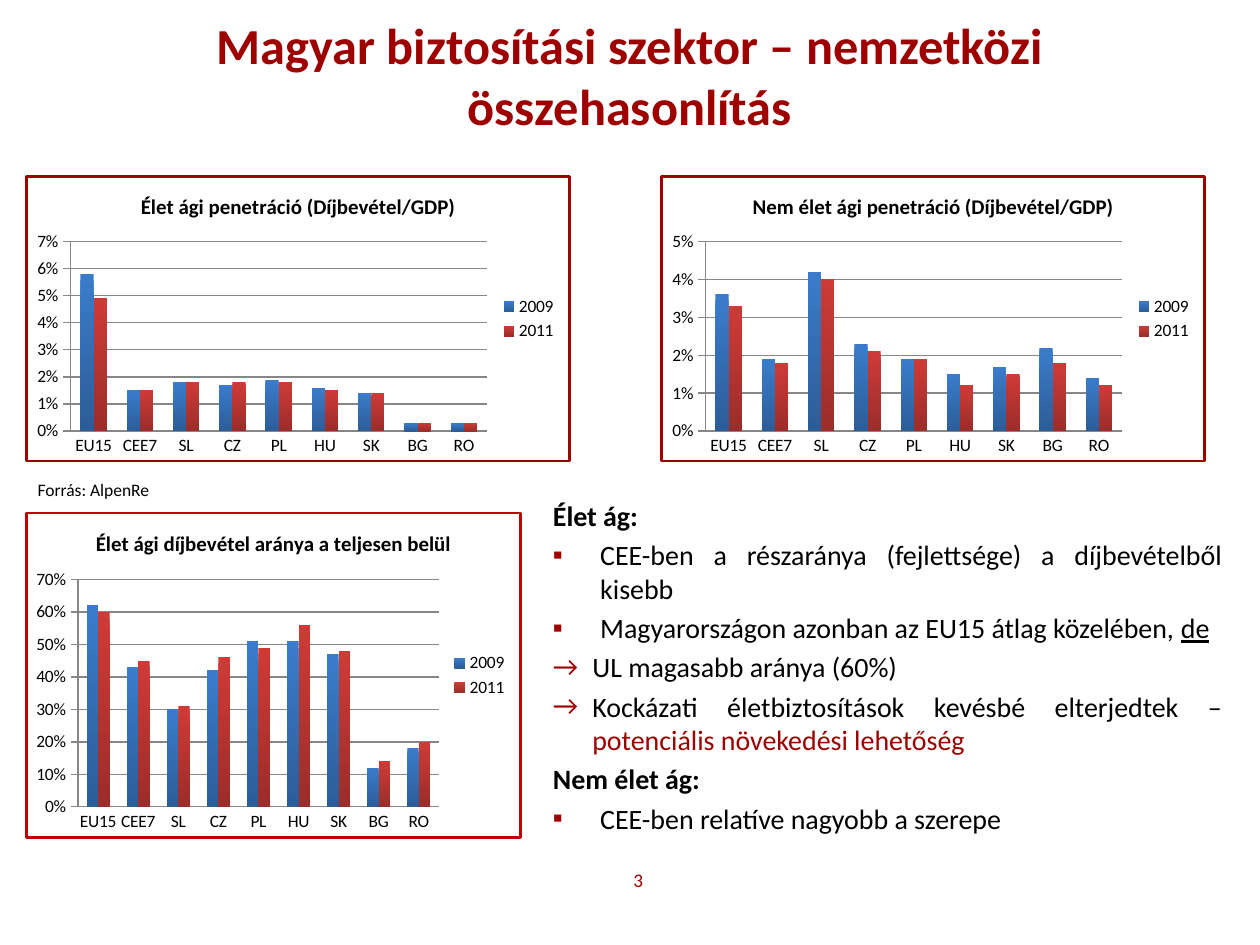
from lxml import etree
from pptx import Presentation
from pptx.chart.data import CategoryChartData
from pptx.dml.color import RGBColor
from pptx.enum import chart as ch, text as tx
from pptx.oxml import parse_xml
from pptx.oxml.ns import nsdecls, qn
from pptx.util import Pt

RED = RGBColor(0x9E, 0x00, 0x00)
EDGE = RGBColor(0xC0, 0x00, 0x00)
BLACK = RGBColor(0x00, 0x00, 0x00)
GRID = RGBColor(0x86, 0x86, 0x86)
BARS = [
    (RGBColor(0x3A, 0x7C, 0xCB), RGBColor(0x2C, 0x5D, 0x98)),
    (RGBColor(0xCE, 0x3B, 0x37), RGBColor(0x9B, 0x2D, 0x2A)),
]
FONT = "Calibri"
LANDS = ["EU15", "CEE7", "SL", "CZ", "PL", "HU", "SK", "BG", "RO"]
YEARS = ["2009", "2011"]

# Charts: box, title, border, axis top, axis step, percent values per year
CHARTS = [
    ((14.4, 100.1, 311.8, 164.2), "Élet ági penetráció (Díjbevétel/GDP)", RED, 7, 1,
     [[5.8, 1.5, 1.8, 1.7, 1.9, 1.6, 1.4, 0.3, 0.3],
      [4.9, 1.5, 1.8, 1.8, 1.8, 1.5, 1.4, 0.3, 0.3]]),
    ((377.3, 100.1, 311.8, 164.2), "Nem élet ági penetráció (Díjbevétel/GDP)", RED, 5, 1,
     [[3.6, 1.9, 4.2, 2.3, 1.9, 1.5, 1.7, 2.2, 1.4],
      [3.3, 1.8, 4, 2.1, 1.9, 1.2, 1.5, 1.8, 1.2]]),
    ((14.4, 292.3, 283.7, 187.2), "Élet ági díjbevétel aránya a teljesen belül", EDGE, 70, 10,
     [[62, 43, 30, 42, 51, 51, 47, 12, 18],
      [60, 45, 31, 46, 49, 56, 48, 14, 20]]),
]

# Notes: bullet, then runs of text with their format
NOTES = [
    ("", [("Élet ág:", {"bold": True})]),
    ("▪", [("CEE-ben a részaránya (fejlettsége) a díjbevételből kisebb", {})]),
    ("▪", [("Magyarországon azonban az EU15 átlag közelében, ", {}),
           ("de", {"under": True})]),
    ("→", [("UL magasabb aránya (60%)", {})]),
    ("→", [("Kockázati életbiztosítások kevésbé elterjedtek – ", {}),
           ("potenciális növekedési lehetőség", {"color": RED})]),
    ("", [("Nem élet ág:", {"bold": True})]),
    ("▪", [("CEE-ben relatíve nagyobb a szerepe", {})]),
]


def style(font, size, color=BLACK, bold=False, under=None):
    font.name, font.size, font.bold = FONT, Pt(size), bold
    font.underline = under
    font.color.rgb = color


def write(para, words, size, align=None, **form):
    """Add one formatted run to a paragraph."""
    run = para.add_run()
    run.text = words
    style(run.font, size, **form)
    if align is not None:
        para.alignment = align


def frame(slide, box, anchor=tx.MSO_ANCHOR.TOP):
    body = slide.shapes.add_textbox(*map(Pt, box)).text_frame
    body.word_wrap = True
    body.vertical_anchor = anchor
    return body


def label(slide, box, words, size, anchor=tx.MSO_ANCHOR.TOP, **form):
    write(frame(slide, box, anchor).paragraphs[0], words, size, **form)


def indent(para, mark):
    """Hang the paragraph, with a red bullet if it has one."""
    props = para._p.get_or_add_pPr()
    hang = Pt(22.5 if mark == "→" else 27)
    props.set("marL", str(hang))
    props.set("indent", str(-hang))
    if mark:
        tint = etree.SubElement(props, qn("a:buClr"))
        etree.SubElement(tint, qn("a:srgbClr")).set("val", str(RED))
        etree.SubElement(props, qn("a:buFont")).set("typeface", FONT)
        etree.SubElement(props, qn("a:buChar")).set("char", mark)
    else:
        etree.SubElement(props, qn("a:buNone"))


def notes(slide, box):
    body = frame(slide, box)
    for i, (mark, runs) in enumerate(NOTES):
        para = body.paragraphs[0] if i == 0 else body.add_paragraph()
        indent(para, mark)
        if i:
            para.space_before = Pt(3.2)
        for words, form in runs:
            write(para, words, 16, align=tx.PP_ALIGN.JUSTIFY, **form)


def border(chart, color):
    area = parse_xml(
        f'<c:spPr {nsdecls("c", "a")}><a:solidFill><a:srgbClr val="FFFFFF"/></a:solidFill>'
        f'<a:ln w="{Pt(1.5)}"><a:solidFill><a:srgbClr val="{color}"/></a:solidFill></a:ln>'
        '</c:spPr>')
    chart._chartSpace.find(qn("c:chart")).addnext(area)


def columns(slide, box, title, edge, top, step, rows):
    data = CategoryChartData(number_format="0%")
    data.categories = LANDS
    for year, row in zip(YEARS, rows):
        data.add_series(year, [round(v / 100, 3) for v in row])
    kind = ch.XL_CHART_TYPE.COLUMN_CLUSTERED
    chart = slide.shapes.add_chart(kind, *map(Pt, box), data).chart
    style(chart.font, 10)
    border(chart, edge)

    # Title and legend
    chart.has_title = True
    write(chart.chart_title.text_frame.paragraphs[0], title, 12, bold=True)
    chart.chart_title.include_in_layout = False
    chart.has_legend = True
    chart.legend.position = ch.XL_LEGEND_POSITION.RIGHT
    chart.legend.include_in_layout = False

    # Axes
    cats, vals = chart.category_axis, chart.value_axis
    cats.major_tick_mark = ch.XL_TICK_MARK.NONE
    vals.major_tick_mark = ch.XL_TICK_MARK.CROSS
    vals.minimum_scale, vals.maximum_scale = 0, top / 100
    vals.major_unit = step / 100
    vals.tick_labels.number_format = "0%"
    vals.tick_labels.number_format_is_linked = False
    vals.has_major_gridlines = True
    for line in (cats.format.line, vals.format.line, vals.major_gridlines.format.line):
        line.color.rgb = GRID
        line.width = Pt(0.75)

    # Bars
    plot = chart.plots[0]
    plot.vary_by_categories = False
    plot.gap_width, plot.overlap = 150, 0
    for series, tones in zip(plot.series, BARS):
        fill = series.format.fill
        fill.gradient()
        fill.gradient_angle = 270
        for stop, tone in zip(fill.gradient_stops, tones):
            stop.color.rgb = tone


def main():
    deck = Presentation()
    deck.slide_width, deck.slide_height = Pt(720), Pt(540)
    slide = deck.slides.add_slide(deck.slide_layouts[6])
    mid = {"anchor": tx.MSO_ANCHOR.MIDDLE, "align": tx.PP_ALIGN.CENTER, "color": RED}

    label(slide, (36, 9.4, 648, 67), "Magyar biztosítási szektor – nemzetközi összehasonlítás",
          28.8, bold=True, **mid)
    for spec in CHARTS:
        columns(slide, *spec)
    label(slide, (14.4, 270, 164.2, 19.4), "Forrás: AlpenRe", 10)
    notes(slide, (308.9, 281.5, 396.7, 198.7))
    label(slide, (280.8, 491, 167.8, 23), "3", 11, **mid)
    deck.save("out.pptx")


if __name__ == "__main__":
    main()
